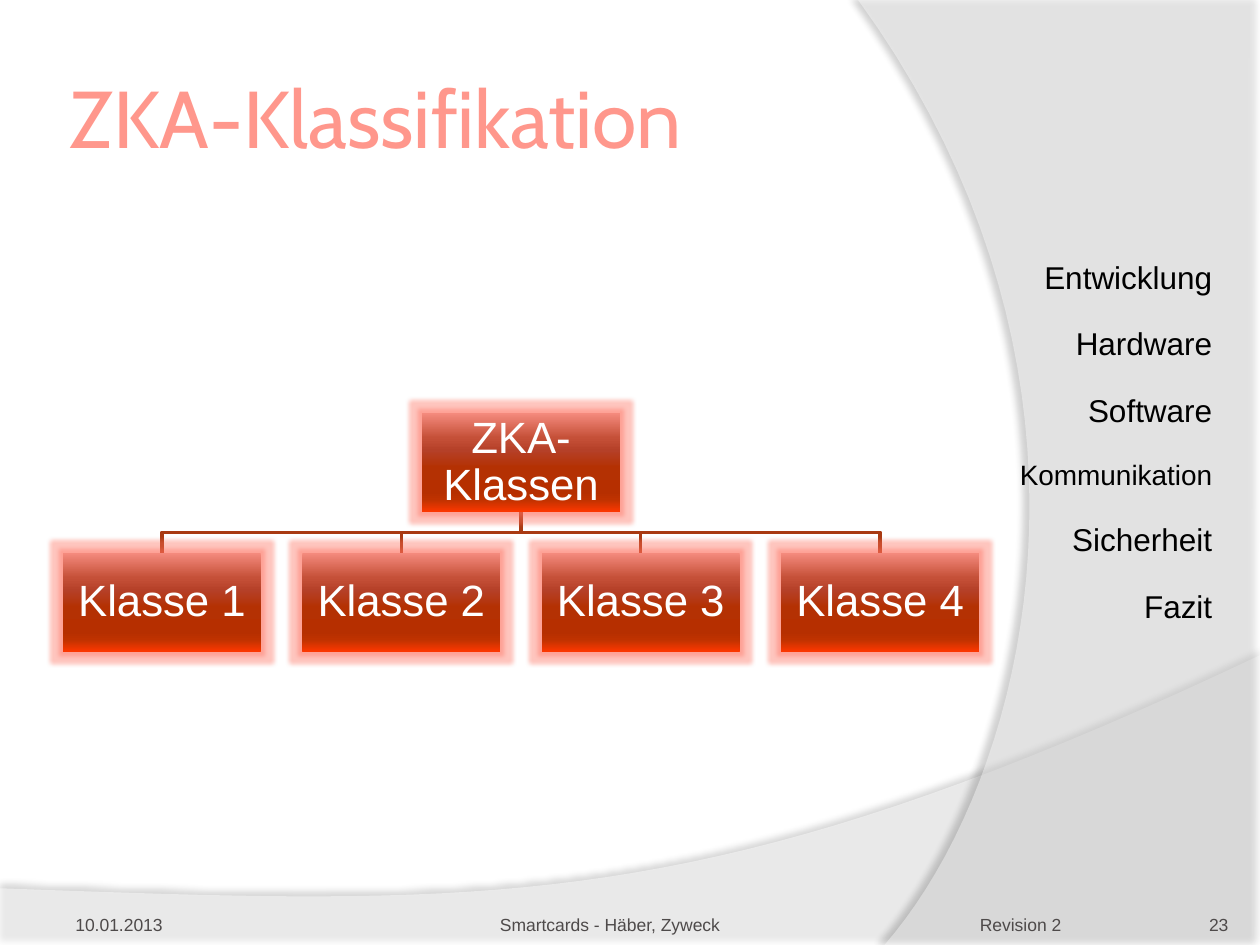
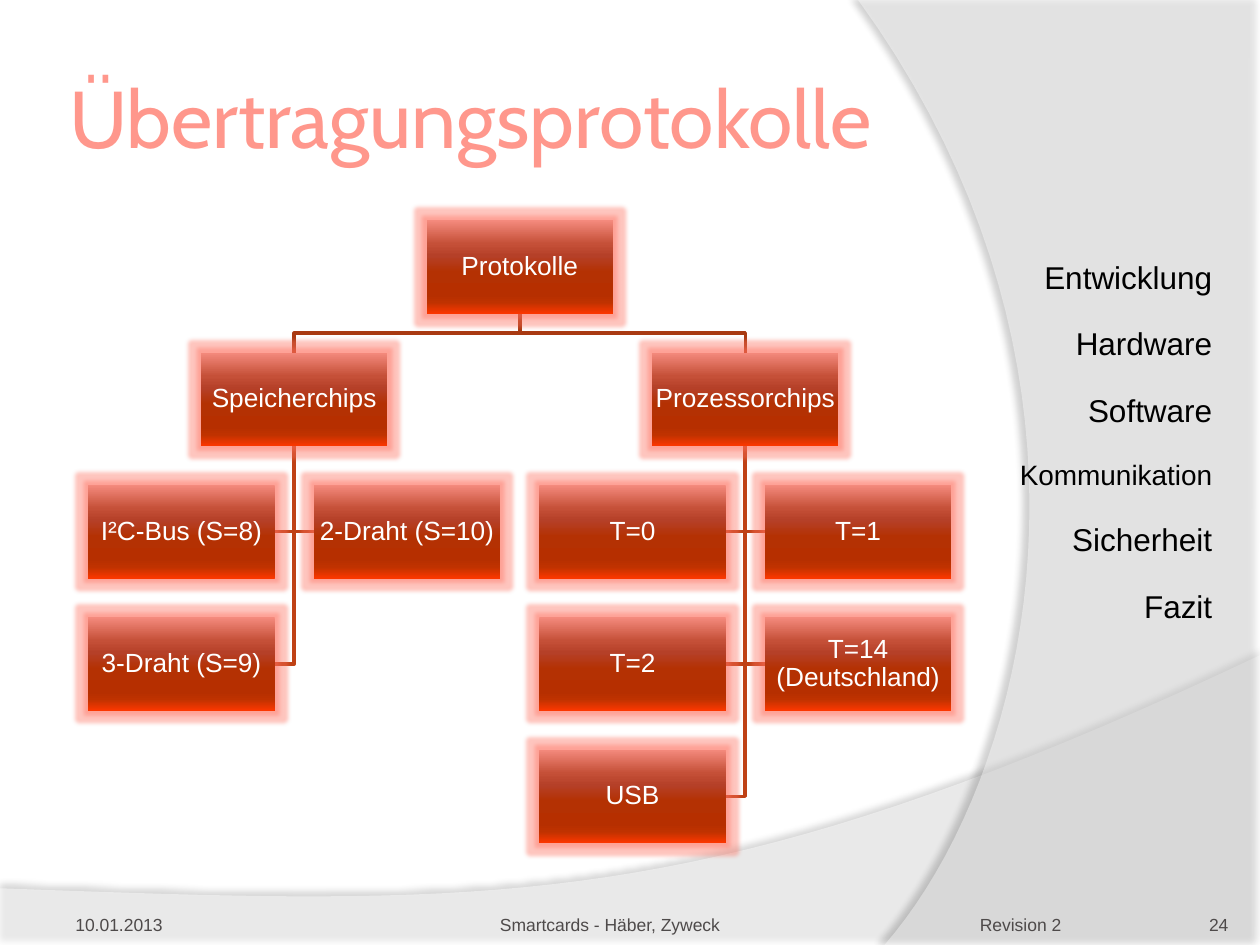
from dataclasses import dataclass

from lxml import etree
from pptx import Presentation
from pptx import util as u
from pptx.dml.color import RGBColor
from pptx.enum import shapes, text
from pptx.oxml.ns import qn

WHITE = RGBColor(0xFF, 0xFF, 0xFF)
BLACK = RGBColor(0, 0, 0)
SALMON = RGBColor(0xFF, 0x97, 0x8C)
GLOW = RGBColor(0xFF, 0x6E, 0x5C)
FOOTER_GREY = RGBColor(0x4E, 0x4A, 0x4A)
FORK_LINE = RGBColor(0xA9, 0x3A, 0x12)
HANG_LINE = RGBColor(0xBF, 0x41, 0x15)
BOX_STOPS = [
    (0, RGBColor(0xF4, 0x8A, 0x7D)),
    (25, RGBColor(0xC5, 0x50, 0x38)),
    (38, RGBColor(0xB5, 0x40, 0x28)),
    (55, RGBColor(0xB4, 0x31, 0x03)),
    (80, RGBColor(0xB6, 0x2F, 0x00)),
    (88, RGBColor(0xBF, 0x32, 0x00)),
    (100, RGBColor(0xFB, 0x37, 0x00)),
]
BODY_FONT, TITLE_FONT = "Arial", "Cabin"
LEFT, CENTER, RIGHT = text.PP_ALIGN.LEFT, text.PP_ALIGN.CENTER, text.PP_ALIGN.RIGHT
MIDDLE, BOTTOM = text.MSO_ANCHOR.MIDDLE, text.MSO_ANCHOR.BOTTOM

CHAPTERS = ["Entwicklung", "Hardware", "Software", "Kommunikation", "Sicherheit", "Fazit"]
CURRENT_CHAPTER = "Kommunikation"
ZKA_CLASSES = [(f"Klasse {i + 1}", i, []) for i in range(4)]
PROTOCOLS = [
    ("Speicherchips", 0.5, ["I²C-Bus (S=8)", "2-Draht (S=10)", "3-Draht (S=9)"]),
    ("Prozessorchips", 2.5, ["T=0", "T=1", "T=2", "T=14 (Deutschland)", "USB"]),
]


@dataclass
class Grid:
    """Box grid of a tree, in inches; columns may be fractional."""
    left: float
    top: float
    col_step: float
    row_step: float
    width: float
    height: float
    font_size: int

    def corner(self, col, row):
        return self.left + col * self.col_step, self.top + row * self.row_step

    def center(self, col, row):
        x, y = self.corner(col, row)
        return x + self.width / 2, y + self.height / 2


def add_color(parent, rgb, alpha=100):
    clr = etree.SubElement(parent, qn("a:srgbClr"), val=str(rgb))
    if alpha < 100:
        etree.SubElement(clr, qn("a:alpha"), val=str(alpha * 1000))


def add_effect(sp, tag, rgb, alpha, **attrs):
    sp.shadow.inherit = False
    effects = sp._element.spPr.find(qn("a:effectLst"))
    effect = etree.SubElement(effects, qn(tag), {k: str(v) for k, v in attrs.items()})
    add_color(effect, rgb, alpha)


def freeform(slide, points, close):
    points = [(u.Inches(x), u.Inches(y)) for x, y in points]
    builder = slide.shapes.build_freeform(*points[0])
    builder.add_line_segments(points[1:], close=close)
    return builder.convert_to_shape()


def bezier(p0, p1, p2, p3, steps=40):
    for i in range(steps + 1):
        t = i / steps
        weights = ((1 - t) ** 3, 3 * t * (1 - t) ** 2, 3 * t * t * (1 - t), t ** 3)
        yield tuple(sum(w * p[axis] for w, p in zip(weights, (p0, p1, p2, p3)))
                    for axis in (0, 1))


def add_band(slide, points, opacity, shadow_alpha, distance, direction):
    sp = freeform(slide, points, close=True)
    sp.fill.solid()
    sp.fill.fore_color.rgb = WHITE
    clr = sp._element.spPr.find(qn("a:solidFill"))[0]
    etree.SubElement(clr, qn("a:alpha"), val=str(opacity * 1000))
    sp.line.fill.background()
    add_effect(sp, "a:outerShdw", BLACK, shadow_alpha, blurRad=u.Pt(4),
               dist=u.Pt(distance), dir=direction * 60000, algn="ctr", rotWithShape=0)


def set_frame(tf, anchor, margins):
    tf.word_wrap = True
    tf.auto_size = text.MSO_AUTO_SIZE.NONE
    tf.vertical_anchor = anchor
    tf.margin_left, tf.margin_top, tf.margin_right, tf.margin_bottom = map(u.Inches, margins)


def set_paragraph(p, content, size, color, align, font=BODY_FONT):
    p.text = content
    p.alignment = align
    p.font.name = font
    p.font.size = u.Pt(size)
    p.font.color.rgb = color


def add_footer(slide, content, left, width, align, margins=(0, 0.05, 0, 0)):
    box = slide.shapes.add_textbox(*map(u.Inches, (left, 7.02, width, 0.4)))
    set_frame(box.text_frame, BOTTOM, margins)
    set_paragraph(box.text_frame.paragraphs[0], content, 10, FOOTER_GREY, align)


def add_chapters(slide):
    box = slide.shapes.add_textbox(*map(u.Inches, (7.93, 0.29, 1.79, 6.42)))
    tf = box.text_frame
    set_frame(tf, MIDDLE, (0.1, 0.05, 0.1, 0.05))
    for i, chapter in enumerate(CHAPTERS):
        p = tf.add_paragraph() if i else tf.paragraphs[0]
        size = 16 if chapter == CURRENT_CHAPTER else 18
        set_paragraph(p, chapter, size, BLACK, RIGHT)
        p.space_before, p.space_after = u.Pt(4.5), u.Pt(12)


def add_slide(prs, title, number):
    """Add a slide with the bands, chapter list, title and footers all slides share."""
    slide = prs.slides.add_slide(prs.slide_layouts[5])
    add_band(slide, [(0, 7.05), (0, 7.51), (10, 7.51),
                     *bezier((10, 5.2), (5.59, 7.29), (3.91, 7.19), (0, 7.05))],
             45, 35, 3.5, 270)
    add_band(slide, [(10.02, 0), (10.01, 7.5),
                     *bezier((7.02, 7.5), (8.16, 6.19), (8.99, 3), (6.81, 0))],
             40, 45, 4, 180)
    add_chapters(slide)

    sp = slide.shapes.title
    sp.left, sp.top, sp.width, sp.height = map(u.Inches, (0.5, 0.3, 7.26, 1.25))
    set_frame(sp.text_frame, MIDDLE, [0.05] * 4)
    set_paragraph(sp.text_frame.paragraphs[0], title, 46, SALMON, LEFT, TITLE_FONT)

    add_footer(slide, "10.01.2013", 0.5, 1.74, LEFT, (0.1, 0.05, 0.1, 0))
    add_footer(slide, "Smartcards - Häber, Zyweck", 2.48, 4.72, CENTER)
    add_footer(slide, "Revision 2", 7.47, 1.26, CENTER)
    add_footer(slide, str(number), 8.92, 0.83, RIGHT, [0] * 4)
    return slide


def add_branch_line(slide, points, color):
    sp = freeform(slide, points, close=False)
    sp.fill.background()
    sp.line.color.rgb = color
    sp.line.width = u.Pt(2)
    sp.shadow.inherit = False


def add_fork(slide, grid, parent, child):
    """Line from the parent's bottom to the child's top."""
    x1, y1 = grid.center(*parent)
    x2, y2 = grid.center(*child)
    middle = (y1 + y2) / 2
    add_branch_line(slide, [(x1, y1 + grid.height / 2), (x1, middle),
                            (x2, middle), (x2, y2 - grid.height / 2)], FORK_LINE)


def add_hang(slide, grid, parent, child):
    """Line from the parent's bottom to the child's inner side."""
    x1, y1 = grid.center(*parent)
    x2, y2 = grid.center(*child)
    side = grid.width / 2 if x2 < x1 else -grid.width / 2
    add_branch_line(slide, [(x1, y1 + grid.height / 2), (x1, y2), (x2 + side, y2)],
                    HANG_LINE)


def add_box(slide, grid, label, cell):
    place = map(u.Inches, (*grid.corner(*cell), grid.width, grid.height))
    sp = slide.shapes.add_shape(shapes.MSO_SHAPE.RECTANGLE, *place)
    sp.fill.gradient()
    sp.fill.gradient_angle = 270
    stops = sp._element.spPr.find(qn("a:gradFill")).find(qn("a:gsLst"))
    stops.clear()
    for position, rgb in BOX_STOPS:
        add_color(etree.SubElement(stops, qn("a:gs"), pos=str(position * 1000)), rgb)
    sp.line.fill.background()
    add_effect(sp, "a:glow", GLOW, 40, rad=u.Pt(5))
    set_frame(sp.text_frame, MIDDLE, [0.01] * 4)
    p = sp.text_frame.paragraphs[0]
    set_paragraph(p, label, grid.font_size, WHITE, CENTER)
    p.line_spacing = 0.9


def add_tree(slide, grid, root, branches):
    """Root over a row of branches, each with its leaves hanging in pairs below."""
    root_cell = (1.5, 0)
    boxes = [(root, root_cell)]
    for branch, col, leaves in branches:
        cell = (col, 1)
        boxes.append((branch, cell))
        add_fork(slide, grid, root_cell, cell)
        for i, leaf in enumerate(leaves):
            leaf_cell = (col - 0.5 + i % 2, 2 + i // 2)
            boxes.append((leaf, leaf_cell))
            add_hang(slide, grid, cell, leaf_cell)
    for label, cell in boxes:
        add_box(slide, grid, label, cell)


def main():
    prs = Presentation()
    prs.slide_width, prs.slide_height = u.Inches(10), u.Inches(7.5)

    slide = add_slide(prs, "ZKA-Klassifikation", 23)
    add_tree(slide, Grid(0.5, 3.28, 1.9, 1.11, 1.57, 0.78, 25), "ZKA-Klassen", ZKA_CLASSES)

    slide = add_slide(prs, "Übertragungsprotokolle", 24)
    add_tree(slide, Grid(0.7, 1.75, 1.79, 1.05, 1.48, 0.74, 15), "Protokolle", PROTOCOLS)

    prs.save("out.pptx")


if __name__ == "__main__":
    main()
